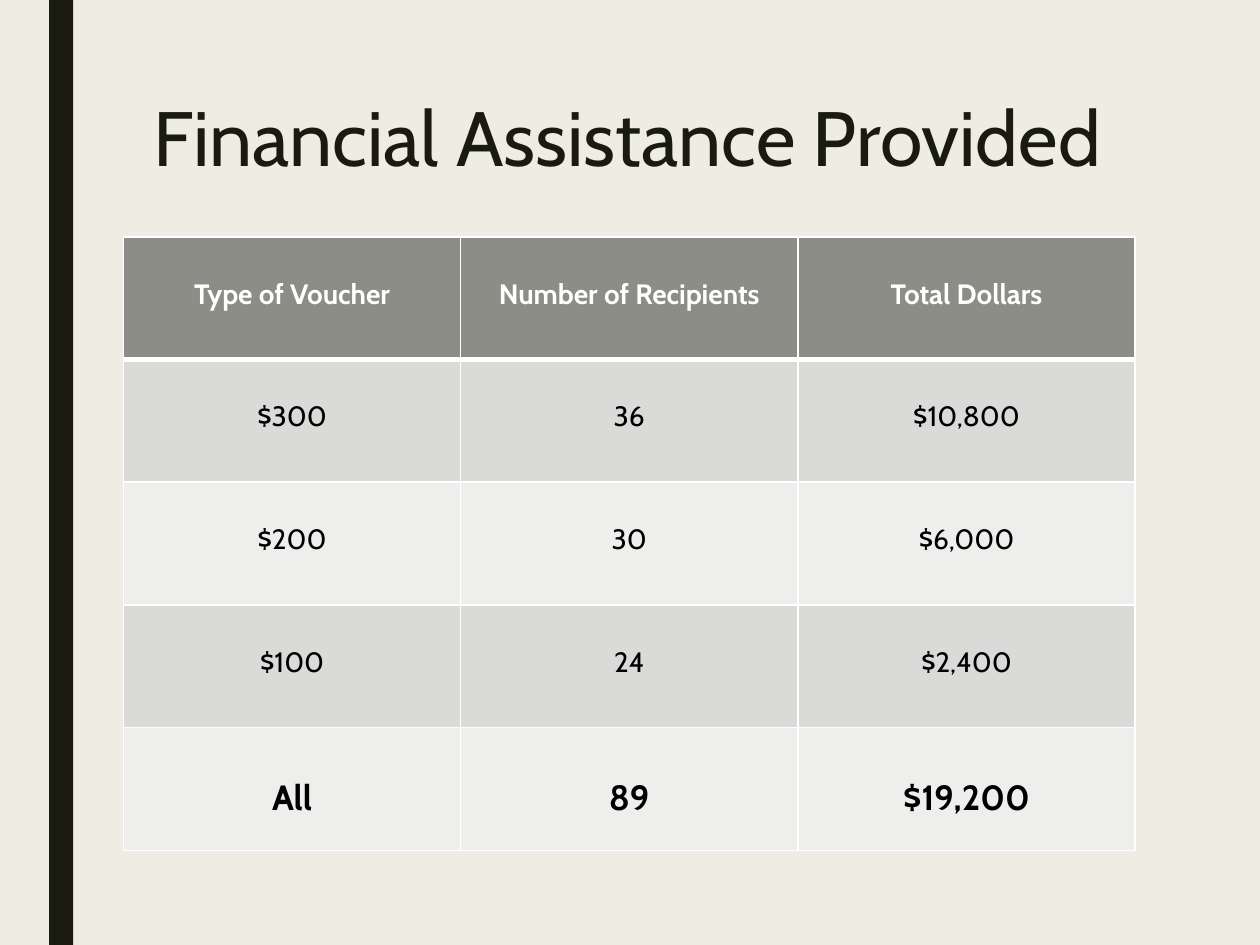
from lxml import etree
from pptx import Presentation
from pptx import util as u
from pptx.dml.color import RGBColor
from pptx.enum import shapes, text
from pptx.oxml.ns import qn

COLORS = {
    "background": "EFEDE3",
    "dark": "191B0E",
    "header": "8C8D86",
    "odd": "DADBD9",
    "even": "EEEEED",
    "white": "FFFFFF",
    "black": "000000",
}
ROWS = [
    ("Type of Voucher", "Number of Recipients", "Total Dollars"),
    ("$300", "36", "$10,800"),
    ("$200", "30", "$6,000"),
    ("$100", "24", "$2,400"),
    ("All", "89", "$19,200"),
]


def color(name):
    return RGBColor.from_string(COLORS[name])


def write(frame, words, size, ink, bold=False, align=text.PP_ALIGN.LEFT,
          spacing=1.0, font="Cabin"):
    para = frame.paragraphs[0]
    para.alignment = align
    para.line_spacing = spacing
    span = para.add_run()
    span.text = words
    span.font.name = font
    span.font.size = u.Pt(size)
    span.font.bold = bold
    span.font.color.rgb = color(ink)


class SlideBuilder:
    def __init__(self, page):
        self.page = page
        fill = page.background.fill
        fill.solid()
        fill.fore_color.rgb = color("background")

    def bar(self, *place):
        bar = self.page.shapes.add_shape(
            shapes.MSO_SHAPE.RECTANGLE, *map(u.Inches, place))
        bar.shadow.inherit = False
        bar.fill.solid()
        bar.fill.fore_color.rgb = color("dark")
        bar.line.fill.background()

    def title(self, words, *place):
        box = self.page.shapes.add_textbox(*map(u.Inches, place))
        box.text_frame.word_wrap = True
        write(box.text_frame, words, 44, "dark", spacing=0.89)

    def border(self, cell, side, width):
        line = etree.SubElement(cell._tc.get_or_add_tcPr(), qn(f"a:ln{side}"),
                                w=str(u.Pt(width)))
        fill = etree.SubElement(line, qn("a:solidFill"))
        etree.SubElement(fill, qn("a:srgbClr"), val=COLORS["white"])

    def table(self, rows, *place):
        table = self.page.shapes.add_table(
            len(rows), len(rows[0]), *map(u.Inches, place)).table
        for index, row in enumerate(rows):
            header, total = index == 0, index == len(rows) - 1
            shade = "header" if header else "odd" if index % 2 else "even"
            for column, words in enumerate(row):
                cell = table.cell(index, column)
                # The header is divided from the body by a heavier rule
                for side in "LRTB":
                    heavy = (index, side) in ((0, "B"), (1, "T"))
                    self.border(cell, side, 3 if heavy else 1)
                cell.fill.solid()
                cell.fill.fore_color.rgb = color(shade)
                cell.margin_top = u.Inches(0.39 if total else 0.32)
                write(cell.text_frame, words, 20 if total else 16,
                      "white" if header else "black", bold=header or total,
                      align=text.PP_ALIGN.CENTER)


def main():
    deck = Presentation()
    deck.slide_width, deck.slide_height = u.Inches(10), u.Inches(7.5)
    builder = SlideBuilder(deck.slides.add_slide(deck.slide_layouts[6]))

    # Side bar and title
    builder.bar(0.39, 0, 0.19, 7.5)
    builder.title("Financial Assistance Provided", 1.12, 0.75, 7.88, 1.62)

    # Voucher table
    builder.table(ROWS, 0.98, 1.88, 8.03, 4.87)

    deck.save("out.pptx")


if __name__ == "__main__":
    main()
